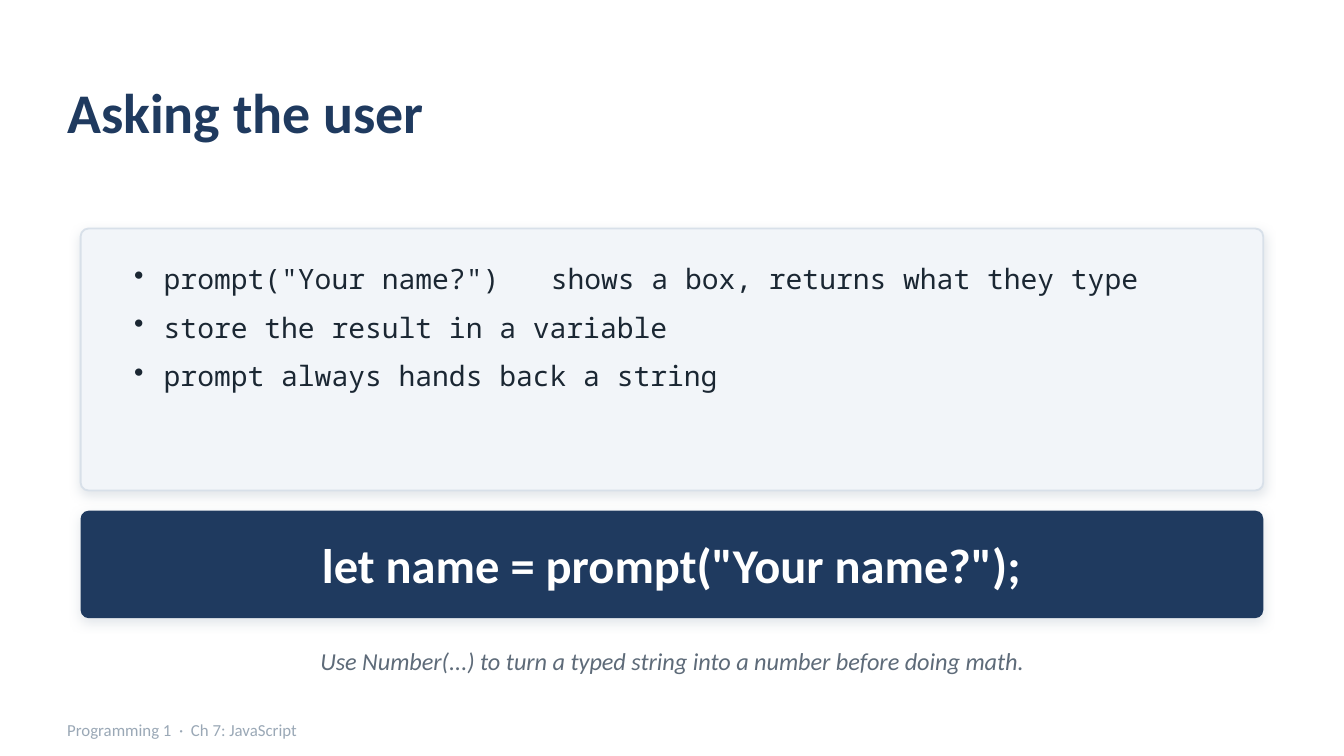
"""Build the "Asking the user" slide of a JavaScript lesson."""
from lxml.etree import SubElement
from pptx import Presentation
from pptx.dml.color import RGBColor
from pptx.enum.shapes import MSO_SHAPE
from pptx.enum.text import MSO_ANCHOR, MSO_AUTO_SIZE, PP_ALIGN
from pptx.oxml.ns import qn
from pptx.util import Pt

PX = 914400 // 200
COLORS = {
    "navy": "1F3A5F", "panel": "F2F5F9", "border": "D8E0E9", "ink": "1B2733",
    "muted": "5E6B79", "mist": "9AA8B6", "white": "FFFFFF",
}


def color(name):
    return RGBColor.from_string(COLORS[name])


def set_text(box, text, size, ink, align=PP_ALIGN.LEFT, bold=False, italic=False):
    frame = box.text_frame
    frame.word_wrap = True
    frame.auto_size = MSO_AUTO_SIZE.NONE
    frame.vertical_anchor = MSO_ANCHOR.MIDDLE
    frame.margin_left = frame.margin_right = frame.margin_top = frame.margin_bottom = 0
    frame.text = text
    paragraph = frame.paragraphs[0]
    paragraph.alignment = align
    font = paragraph.font
    font.name, font.size, font.bold, font.italic = "Calibri", Pt(size), bold, italic
    font.color.rgb = color(ink)


deck = Presentation()
deck.slide_width, deck.slide_height = 2000 * PX, 1125 * PX
page = deck.slides.add_slide(deck.slide_layouts[5])
page.background.fill.solid()
page.background.fill.fore_color.rgb = color("white")

title = page.shapes.title
title.left, title.top, title.width, title.height = 100 * PX, 80 * PX, 1800 * PX, 170 * PX
set_text(title, "Asking the user", 30, "navy", bold=True)

for top, height, fill, border in [(340, 390, "panel", "border"), (760, 160, "navy", None)]:
    card = page.shapes.add_shape(
        MSO_SHAPE.ROUNDED_RECTANGLE, 120 * PX, top * PX, 1760 * PX, height * PX)
    card.adjustments[0] = 12 / height
    card.fill.solid()
    card.fill.fore_color.rgb = color(fill)
    if border:
        card.line.color.rgb = color(border)
        card.line.width = Pt(1)
    else:
        card.line.fill.background()
    card.shadow.inherit = False
    effects = card._element.spPr.find(qn("a:effectLst"))
    shadow = SubElement(effects, qn("a:outerShdw"), blurRad=str(Pt(6)), dist=str(Pt(2)),
                        dir="5400000", algn="ctr", rotWithShape="0")
    tint = SubElement(shadow, qn("a:srgbClr"), val=COLORS["mist"])
    SubElement(tint, qn("a:alpha"), val="28000")

points = page.shapes.add_textbox(180 * PX, 380 * PX, 1640 * PX, 320 * PX)
points.text_frame.word_wrap = True
points.text_frame.text = "\n".join([
    'prompt("Your name?")\tshows a box, returns what they type',
    "store the result in a variable",
    "prompt always hands back a string",
])
for paragraph in points.text_frame.paragraphs:
    properties = paragraph._p.get_or_add_pPr()
    properties.set("marL", str(44 * PX))
    properties.set("indent", str(-44 * PX))
    SubElement(properties, qn("a:buChar"), char="•")
    tabs = SubElement(properties, qn("a:tabLst"))
    SubElement(tabs, qn("a:tab"), pos=str(620 * PX), algn="l")
    paragraph.space_after = Pt(8)
    paragraph.font.name, paragraph.font.size = "Noto Sans Mono", Pt(15)
    paragraph.font.color.rgb = color("ink")

code = page.shapes.add_textbox(120 * PX, 766 * PX, 1760 * PX, 148 * PX)
set_text(code, 'let name = prompt("Your name?");', 26, "white", PP_ALIGN.CENTER, bold=True)

hint = page.shapes.add_textbox(120 * PX, 944 * PX, 1760 * PX, 80 * PX)
set_text(hint, "Use Number(...) to turn a typed string into a number before doing math.",
         13, "muted", PP_ALIGN.CENTER, italic=True)

footer = page.shapes.add_textbox(100 * PX, 1060 * PX, 1600 * PX, 52 * PX)
set_text(footer, "Programming 1  ·  Ch 7: JavaScript", 9, "mist")

deck.save("out.pptx")
